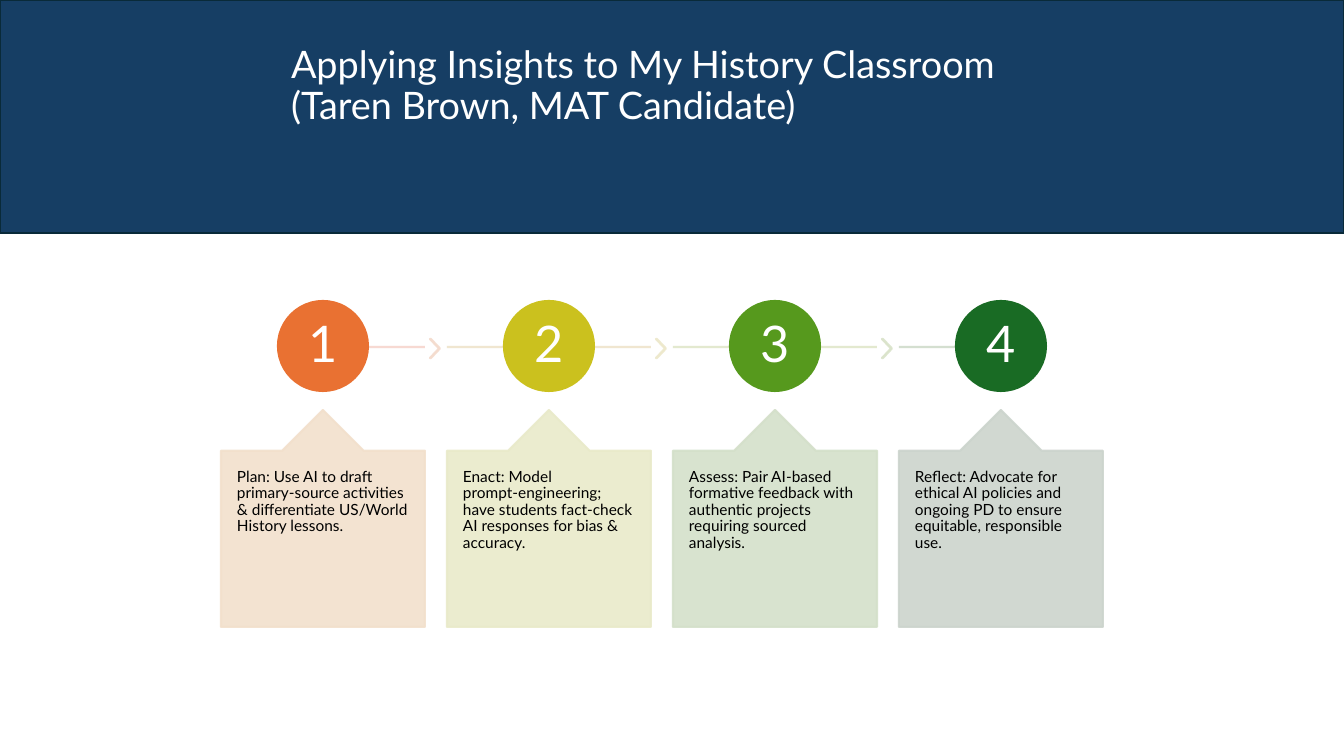
import lxml.etree
import pptx
import pptx.dml.color
import pptx.enum.shapes
import pptx.enum.text
import pptx.oxml.ns
import pptx.util

RGB = pptx.dml.color.RGBColor
SHAPE = pptx.enum.shapes.MSO_SHAPE
ALIGN = pptx.enum.text.PP_ALIGN
ANCHOR = pptx.enum.text.MSO_ANCHOR

FONT = "Lato"
WHITE = RGB(0xFF, 0xFF, 0xFF)
BLACK = RGB(0x00, 0x00, 0x00)
NAVY = RGB(0x16, 0x3E, 0x64)
NAVY_EDGE = RGB(0x09, 0x2A, 0x39)
CIRCLE_COLORS = [
    RGB(0xE9, 0x71, 0x32), RGB(0xCB, 0xC1, 0x1E),
    RGB(0x56, 0x99, 0x1D), RGB(0x19, 0x6B, 0x24),
]
CARD_COLORS = [
    RGB(0xF2, 0xE0, 0xCC), RGB(0xE9, 0xEA, 0xCA),
    RGB(0xD4, 0xE0, 0xCA), RGB(0xCC, 0xD4, 0xCD),
]
LINE_COLORS = [
    RGB(0xF7, 0xD5, 0xCE), RGB(0xEF, 0xE4, 0xCB),
    RGB(0xE1, 0xE7, 0xCA), RGB(0xD0, 0xDC, 0xCB),
]
CHEVRON_COLORS = [
    RGB(0xF4, 0xDB, 0xCD), RGB(0xED, 0xE8, 0xCB), RGB(0xDA, 0xE3, 0xCA),
]

TITLE_LINES = ["Applying Insights to My History Classroom", "(Taren Brown, MAT Candidate)"]
STEPS = [
    "Plan: Use AI to draft primary‑source activities & differentiate US/World History lessons.",
    "Enact: Model prompt‑engineering; have students fact‑check AI responses for bias & accuracy.",
    "Assess: Pair AI‑based formative feedback with authentic projects requiring sourced analysis.",
    "Reflect: Advocate for ethical AI policies and ongoing PD to ensure equitable, responsible use.",
]

SLIDE_WIDTH, SLIDE_HEIGHT = 1344, 756
FIRST_LEFT, COLUMN_STEP, CARD_WIDTH = 221, 226, 204
LINE_Y = 347


def px(length):
    return pptx.util.Emu(round(length * 914400 / 100.8))


def make_translucent(element):
    """Give every colour in the element 90 % opacity."""
    for color in element.iter(pptx.oxml.ns.qn("a:srgbClr")):
        lxml.etree.SubElement(color, pptx.oxml.ns.qn("a:alpha"), val="90000")


def add_shape(slide, kind, box, fill, edge=None, translucent=False):
    shape = slide.shapes.add_shape(kind, *map(px, box))
    shape.shadow.inherit = False
    shape.fill.solid()
    shape.fill.fore_color.rgb = fill
    shape.line.color.rgb = edge or fill
    shape.line.width = pptx.util.Pt(1.5)
    if translucent:
        make_translucent(shape.element.spPr)
    return shape


def write_text(shape, lines, size, color, alignment, anchor, margins):
    """Fill a shape with paragraphs; margins are horizontal and vertical px."""
    frame = shape.text_frame
    frame.text = "\n".join(lines)
    frame.word_wrap = True
    frame.auto_size = pptx.enum.text.MSO_AUTO_SIZE.NONE
    frame.vertical_anchor = anchor
    frame.margin_left = frame.margin_right = px(margins[0])
    frame.margin_top = frame.margin_bottom = px(margins[1])
    for paragraph in frame.paragraphs:
        paragraph.alignment = alignment
        paragraph.line_spacing = 0.9
        paragraph.font.name = FONT
        paragraph.font.size = pptx.util.Pt(size)
        paragraph.font.color.rgb = color


def add_header(slide):
    title = slide.shapes.title
    title.left, title.top, title.width, title.height = map(px, (281, 38, 831, 97))
    write_text(title, TITLE_LINES, 27, WHITE, ALIGN.LEFT, ANCHOR.MIDDLE, (10, 5))
    band = add_shape(slide, SHAPE.RECTANGLE, (0, 0, SLIDE_WIDTH, 233), NAVY, NAVY_EDGE)
    title.element.addprevious(band.element)


def add_line(slide, start, end, color):
    line = slide.shapes.add_connector(
        pptx.enum.shapes.MSO_CONNECTOR.STRAIGHT, px(start), px(LINE_Y), px(end), px(LINE_Y))
    line.line.color.rgb = color
    line.line.width = pptx.util.Pt(1.5)
    properties = line.element.spPr
    make_translucent(properties)
    lxml.etree.SubElement(properties, pptx.oxml.ns.qn("a:effectLst"))


def add_step(slide, index, text):
    left = FIRST_LEFT + index * COLUMN_STEP
    is_last = index == len(STEPS) - 1
    line_start = left + 114 if index == 0 else left
    line_end = left + (CARD_WIDTH // 2 if is_last else CARD_WIDTH)
    add_line(slide, line_start, line_end, LINE_COLORS[index])

    if not is_last:
        chevron = add_shape(slide, SHAPE.CHEVRON, (left + 209, 339, 10, 19),
                            CHEVRON_COLORS[index], translucent=True)
        chevron.adjustments[0] = 0.9

    circle = add_shape(slide, SHAPE.OVAL, (left + 57, 301, 90, 90), CIRCLE_COLORS[index])
    write_text(circle, [str(index + 1)], 36, WHITE, ALIGN.CENTER, ANCHOR.MIDDLE, (3, 3))

    card = add_shape(slide, SHAPE.UP_ARROW_CALLOUT, (left, 410, CARD_WIDTH, 217),
                     CARD_COLORS[index], translucent=True)
    for position, value in enumerate((0.5, 0.2, 0.2, 1)):
        card.adjustments[position] = value
    write_text(card, [text], 11, BLACK, ALIGN.LEFT, ANCHOR.TOP, (16, 18))


def main():
    presentation = pptx.Presentation()
    presentation.slide_width = px(SLIDE_WIDTH)
    presentation.slide_height = px(SLIDE_HEIGHT)
    slide = presentation.slides.add_slide(presentation.slide_layouts.get_by_name("Title Only"))
    add_header(slide)
    for index, text in enumerate(STEPS):
        add_step(slide, index, text)
    presentation.save("out.pptx")


if __name__ == "__main__":
    main()
